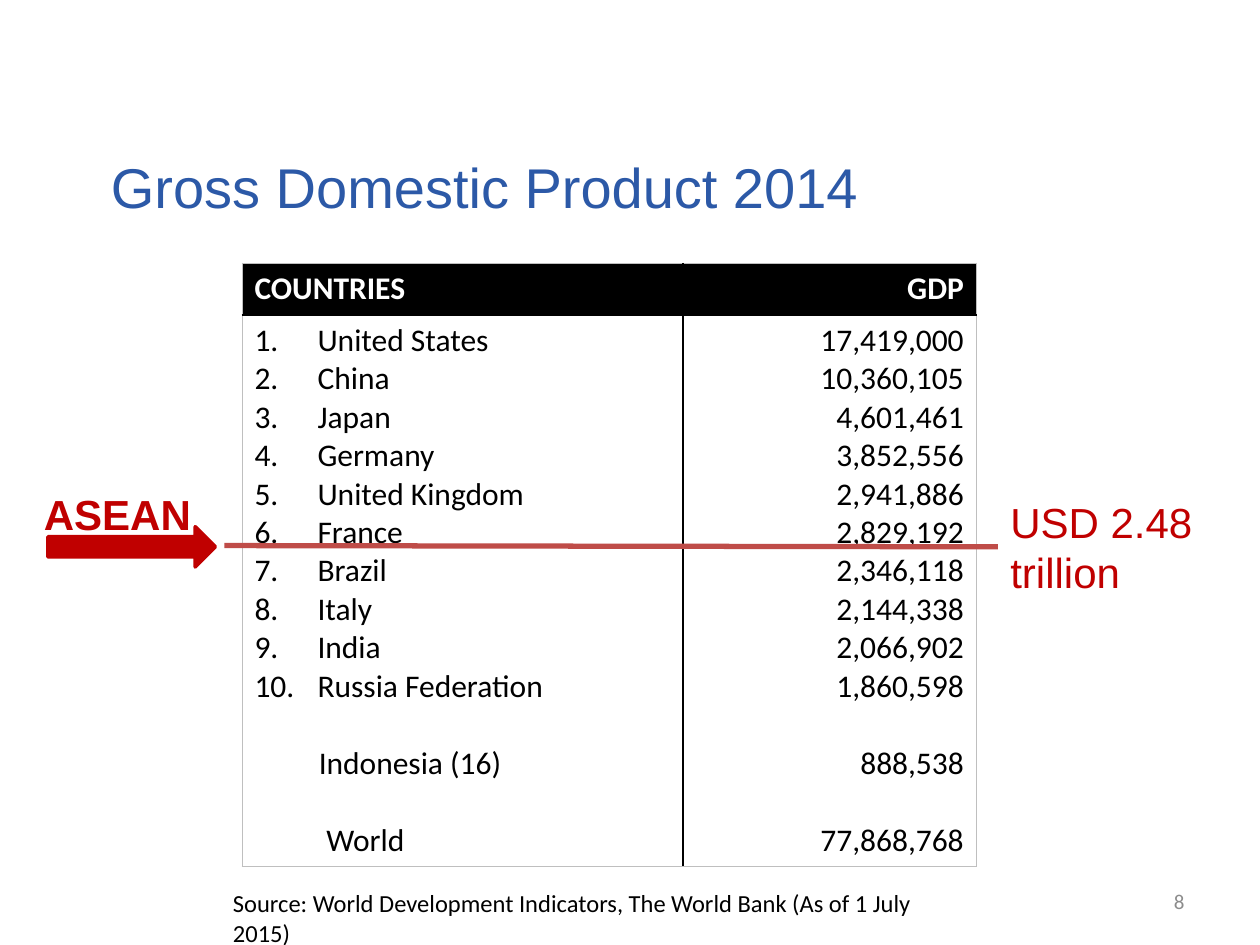
from lxml.etree import SubElement
from pptx import Presentation
from pptx.dml.color import RGBColor
from pptx.enum.shapes import MSO_CONNECTOR, MSO_SHAPE
from pptx.enum.text import MSO_ANCHOR, PP_ALIGN
from pptx.oxml.ns import qn
from pptx.util import Inches, Pt

COLORS = {"black": "000000", "white": "FFFFFF", "red": "C00000", "line": "BF4C48",
          "title": "2C59A7", "number": "8C8C8C", "edge": "BFBFBF"}


def color(name):
    return RGBColor.from_string(COLORS[name])


def write(para, text, size, font, color_name, bold=False, align=PP_ALIGN.LEFT):
    span = para.add_run()
    span.text = text
    para.alignment = align
    for name, value in {"size": Pt(size), "name": font, "bold": bold}.items():
        setattr(span.font, name, value)
    span.font.color.rgb = color(color_name)


deck = Presentation()
deck.slide_width, deck.slide_height = Inches(10), Inches(7.5)
page = deck.slides.add_slide(deck.slide_layouts[5])

# Title
title = page.shapes.title
title_format = {"left": 0.78, "top": 1.09, "width": 7.81, "height": 0.77}
for name, value in title_format.items():
    setattr(title, name, Inches(value))
title.text_frame.vertical_anchor = MSO_ANCHOR.MIDDLE
write(title.text_frame.paragraphs[0], "Gross Domestic Product 2014", 32, "Arial", "title")

# GDP table: a header row and one tall row that holds the ranking
ranking = [
    ("United States", "17,419,000"), ("China", "10,360,105"), ("Japan", "4,601,461"),
    ("Germany", "3,852,556"), ("United Kingdom", "2,941,886"), ("France", "2,829,192"),
    ("Brazil", "2,346,118"), ("Italy", "2,144,338"), ("India", "2,066,902"),
    ("Russia Federation", "1,860,598"),
]
unranked = {"Indonesia (16)": ("888,538", 0.51), "World": ("77,868,768", 0.57)}
rows = ranking + [(country, value) for country, (value, _) in unranked.items()]

table = page.shapes.add_table(2, 2, Inches(1.92), Inches(2.09), Inches(5.83), Inches(4.78)).table
for column, width in zip(table.columns, (3.5, 2.33)):
    column.width = Inches(width)
for row, height in zip(table.rows, (0.41, 4.37)):
    row.height = Inches(height)

for column, (heading, align) in enumerate([("COUNTRIES", PP_ALIGN.LEFT), ("GDP", PP_ALIGN.RIGHT)]):
    header, body = table.cell(0, column), table.cell(1, column)
    write(header.text_frame.paragraphs[0], heading, 18, "Calibri", "white", True, align)
    for index, entry in enumerate(rows):
        frame = body.text_frame
        para = frame.paragraphs[0] if index == 0 else frame.add_paragraph()
        country = entry[0]
        if country in unranked:
            para.space_before = Pt(22)
        if column == 0:
            properties = para._p.get_or_add_pPr()
            if country in unranked:
                properties.set("marL", str(Inches(unranked[country][1])))
            else:
                properties.set("marL", str(Inches(0.5)))
                properties.set("indent", str(-Inches(0.5)))
                SubElement(properties, qn("a:buFont"), typeface="+mj-lt")
                SubElement(properties, qn("a:buAutoNum"), type="arabicPeriod")
        write(para, entry[column], 18, "Calibri", "black", align=align)

    # Borders first, as they come before the fill in the cell properties
    for row, cell in enumerate((header, body)):
        outer = {"a:lnL": column == 0, "a:lnR": column == 1, "a:lnT": row == 0, "a:lnB": row == 1}
        for tag, is_outer in outer.items():
            border = SubElement(cell._tc.get_or_add_tcPr(), qn(tag),
                                w=str(Pt(0.5 if is_outer else 1)))
            fill = SubElement(border, qn("a:solidFill"))
            SubElement(fill, qn("a:srgbClr"), val=COLORS["edge" if is_outer else "black"])
        cell.fill.solid()
        cell.fill.fore_color.rgb = color("white" if row else "black")

# Line marking the ASEAN rank
marker = page.shapes.add_connector(MSO_CONNECTOR.STRAIGHT, Inches(1.78), Inches(4.33),
                                   Inches(7.92), Inches(4.34))
marker.line.color.rgb = color("line")
marker.line.width = Pt(3)
SubElement(marker._element.spPr, qn("a:effectLst"))

# Arrow pointing at the line
arrow = page.shapes.add_shape(MSO_SHAPE.RIGHT_ARROW, Inches(0.38), Inches(4.18),
                              Inches(1.33), Inches(0.32))
arrow.shadow.inherit = False
arrow.fill.solid()
arrow.fill.fore_color.rgb = color("red")
arrow.line.color.rgb = color("red")
arrow.line.width = Pt(2)

# Labels, source and page number
labels = [
    ((1.75, 7, 6.08, 0.34), "Source: World Development Indicators, The World Bank (As of 1 July 2015)",
     14, "Calibri", "black", False, PP_ALIGN.LEFT),
    ((0.25, 3.83, 1.58, 0.5), "ASEAN", 24, "Arial", "red", True, PP_ALIGN.LEFT),
    ((7.92, 3.89, 2.08, 0.91), "USD 2.48 trillion", 24, "Arial", "red", False, PP_ALIGN.LEFT),
    ((7.17, 6.95, 2.33, 0.4), "8", 12, "Calibri", "number", False, PP_ALIGN.RIGHT),
]
for place, *text_format in labels:
    box = page.shapes.add_textbox(*map(Inches, place))
    box.text_frame.word_wrap = True
    write(box.text_frame.paragraphs[0], *text_format)
box.text_frame.vertical_anchor = MSO_ANCHOR.MIDDLE  # the page number

deck.save("out.pptx")
